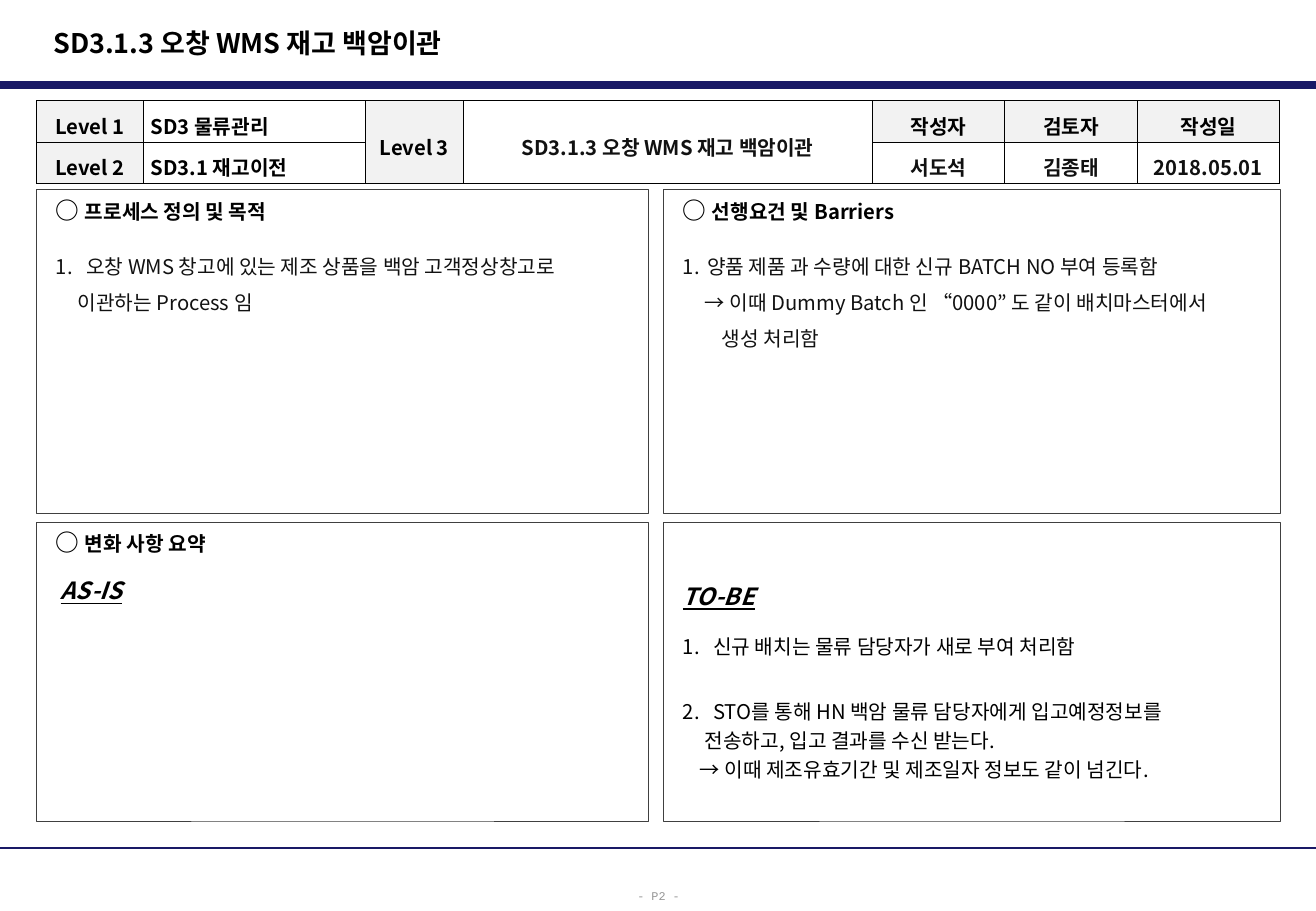
"""Builds the process definition slide for the Ochang WMS stock transfer."""
from lxml.etree import SubElement
from pptx import Presentation
from pptx.dml.color import RGBColor
from pptx.enum.shapes import MSO_CONNECTOR, MSO_SHAPE
from pptx.enum.text import MSO_ANCHOR, PP_ALIGN
from pptx.oxml import parse_xml
from pptx.oxml.ns import nsdecls, qn
from pptx.util import Inches, Pt

FONT = "Noto Sans CJK KR"
BLACK, INK, NAVY, FRAME, GREY, LABEL_FILL = (
    "000000", "111111", "191966", "404040", "969696", "F2F2F2")
SLIDE_WIDTH, SLIDE_HEIGHT = 10.83, 7.5

TITLE = "SD3.1.3 오창 WMS 재고 백암이관"
PAGE_NUMBER = "- P2 -"
RULES = [(0.7, 4.5), (6.98, 1.5)]

COLUMN_WIDTHS = [0.88, 1.83, 0.8, 3.37, 1.09, 1.09, 1.17]
ROW_HEIGHT = 0.34
HEADER_ROWS = [
    ["Level 1", "SD3 물류관리", "Level 3", "SD3.1.3 오창 WMS 재고 백암이관",
     "작성자", "검토자", "작성일"],
    ["Level 2", "SD3.1 재고이전", None, None, "서도석", "김종태", "2018.05.01"],
]
LABEL_CELLS = {(0, 0), (1, 0), (0, 2), (0, 4), (0, 5), (0, 6)}
LEFT_ALIGNED_COLUMN = 1
MERGED_COLUMNS = [2, 3]
DARK_GREY_CELLS = {(0, 3), (1, 4), (1, 5), (1, 6)}

PANEL_COLUMNS = [(0.3, 5.04), (5.46, 5.08)]
PANEL_ROWS = [(1.56, 2.67), (4.3, 2.46)]
# Each line: kind, text, indent in inches, space before in points
PANELS = [
    {"inset": 0.05, "spacing": 1.3, "color": INK, "lines": [
        ("heading", "프로세스 정의 및 목적", 0, 0),
        ("number", "오창 WMS 창고에 있는 제조 상품을 백암 고객정상창고로", 0.25, 14),
        ("text", "이관하는 Process 임", 0.18, 2.4)]},
    {"inset": 0.05, "spacing": 1.3, "color": INK, "lines": [
        ("heading", "선행요건 및 Barriers", 0, 0),
        ("number", "양품 제품 과 수량에 대한 신규 BATCH NO 부여 등록함", 0.2, 14),
        ("text", "→ 이때 Dummy Batch 인 “0000” 도 같이 배치마스터에서", 0.18, 2.4),
        ("text", "생성 처리함", 0.32, 2.4)]},
    {"inset": 0.05, "spacing": 1.2, "color": BLACK, "lines": [
        ("heading", "변화 사항 요약", 0, 0),
        ("label", "AS-IS", 0.04, 11.6)]},
    {"inset": 0.49, "spacing": 1.2, "color": BLACK, "lines": [
        ("label", "TO-BE", 0, 0),
        ("number", "신규 배치는 물류 담당자가 새로 부여 처리함", 0.25, 11.6),
        ("number", "STO를 통해 HN 백암 물류 담당자에게 입고예정정보를", 0.25, 20.9),
        ("text", "전송하고, 입고 결과를 수신 받는다.", 0.18, 0),
        ("text", "→ 이때 제조유효기간 및 제조일자 정보도 같이 넘긴다.", 0.14, 0)]},
]


def rgb(color):
    """Turn a hex string into a colour."""
    return RGBColor.from_string(color)


def style(run, size, color=BLACK, bold=False, face=FONT):
    """Format a run for Latin and Korean letters alike."""
    run.font.size, run.font.bold, run.font.name = Pt(size), bold, face
    run.font.color.rgb = rgb(color)
    SubElement(run.font._element, qn("a:ea")).set("typeface", face)


def add_rule(slide, top, weight):
    """Draw a line across the slide."""
    rule = slide.shapes.add_connector(
        MSO_CONNECTOR.STRAIGHT, 0, Inches(top), Inches(SLIDE_WIDTH), Inches(top))
    rule.line.color.rgb, rule.line.width = rgb(NAVY), Pt(weight)
    SubElement(rule._element.spPr, qn("a:effectLst"))


def add_label(slide, text, place, wrap, align):
    """Add a one-line text box and return its run."""
    label = slide.shapes.add_textbox(*map(Inches, place)).text_frame
    label.word_wrap, label.vertical_anchor = wrap, MSO_ANCHOR.MIDDLE
    label.text = text
    label.paragraphs[0].alignment = align
    return label.paragraphs[0].runs[0]


def set_borders(cell):
    """Give a cell thin black lines on all sides."""
    for index, side in enumerate(("lnL", "lnR", "lnT", "lnB")):
        cell._tc.get_or_add_tcPr().insert(index, parse_xml(
            f'<a:{side} {nsdecls("a")} w="6350"><a:solidFill>'
            f'<a:srgbClr val="{BLACK}"/></a:solidFill></a:{side}>'))


def add_header_table(slide):
    """Add the table of levels, people and date."""
    table = slide.shapes.add_table(
        len(HEADER_ROWS), len(COLUMN_WIDTHS), Inches(0.3), Inches(0.83),
        Inches(sum(COLUMN_WIDTHS)), Inches(ROW_HEIGHT * len(HEADER_ROWS))).table
    table.first_row = table.horz_banding = False
    for column, width in zip(table.columns, COLUMN_WIDTHS):
        column.width = Inches(width)
    for column in MERGED_COLUMNS:
        table.cell(0, column).merge(table.cell(1, column))
    for row, texts in enumerate(HEADER_ROWS):
        table.rows[row].height = Inches(ROW_HEIGHT)
        for column, text in enumerate(texts):
            cell = table.cell(row, column)
            cell.margin_left = cell.margin_right = Inches(0.06)
            cell.margin_top = cell.margin_bottom = Inches(0.01)
            cell.vertical_anchor = MSO_ANCHOR.MIDDLE
            if (row, column) in LABEL_CELLS or (row, column) == (1, 2):
                cell.fill.solid()
                cell.fill.fore_color.rgb = rgb(LABEL_FILL)
            else:
                cell.fill.background()
            set_borders(cell)
            if text:
                cell.text_frame.text = text
                paragraph = cell.text_frame.paragraphs[0]
                paragraph.line_spacing = 1.3
                paragraph.alignment = (PP_ALIGN.LEFT if column == LEFT_ALIGNED_COLUMN
                                       else PP_ALIGN.CENTER)
                color = INK if (row, column) in DARK_GREY_CELLS else BLACK
                style(paragraph.runs[0], 12, color, True)


def fill_line(paragraph, panel, kind, text, indent, gap):
    """Write one line of a panel."""
    paragraph.alignment = PP_ALIGN.LEFT
    if gap:
        paragraph.space_before = Pt(gap)
    properties = paragraph._p.get_or_add_pPr()
    properties.set("marL", str(Inches(indent)))
    if kind == "heading":
        paragraph.text = "○ "
        style(paragraph.runs[0], 14, bold=True)
        heading = paragraph.add_run()
        heading.text = text
        style(heading, 12, bold=True)
        return
    paragraph.text = text
    run = paragraph.runs[0]
    if kind == "label":
        style(run, 14, bold=True)
        run.font.italic = run.font.underline = True
        return
    paragraph.line_spacing = panel["spacing"]
    if kind == "number":
        properties.set("indent", str(-Inches(indent)))
        SubElement(properties, qn("a:buFont")).set("typeface", FONT)
        SubElement(properties, qn("a:buAutoNum")).set("type", "arabicPeriod")
    style(run, 12, panel["color"])


def add_panel(slide, panel, left, top, width, height):
    """Add a framed panel with its lines."""
    frame = slide.shapes.add_shape(
        MSO_SHAPE.RECTANGLE, *map(Inches, (left, top, width, height)))
    frame.shadow.inherit = False
    frame.fill.background()
    frame.line.color.rgb, frame.line.width = rgb(FRAME), Pt(0.5)
    body = frame.text_frame
    body.word_wrap, body.vertical_anchor = True, MSO_ANCHOR.TOP
    body.margin_left, body.margin_top = Inches(0.16), Inches(panel["inset"])
    for index, line in enumerate(panel["lines"]):
        paragraph = body.add_paragraph() if index else body.paragraphs[0]
        fill_line(paragraph, panel, *line)


def main():
    """Build and save the slide."""
    deck = Presentation()
    deck.slide_width, deck.slide_height = Inches(SLIDE_WIDTH), Inches(SLIDE_HEIGHT)
    slide = deck.slides.add_slide(deck.slide_layouts[6])
    for top, weight in RULES:
        add_rule(slide, top, weight)
    page = add_label(slide, PAGE_NUMBER, (5.14, 7.25, 0.56, 0.25), False, PP_ALIGN.CENTER)
    style(page, 7, GREY, face="Courier New")
    title = add_label(slide, TITLE, (0.34, 0.16, 7.11, 0.38), True, PP_ALIGN.LEFT)
    style(title, 16, bold=True)
    add_header_table(slide)
    for index, panel in enumerate(PANELS):
        row, column = divmod(index, len(PANEL_COLUMNS))
        (left, width), (top, height) = PANEL_COLUMNS[column], PANEL_ROWS[row]
        add_panel(slide, panel, left, top, width, height)
    deck.save("out.pptx")


if __name__ == "__main__":
    main()
